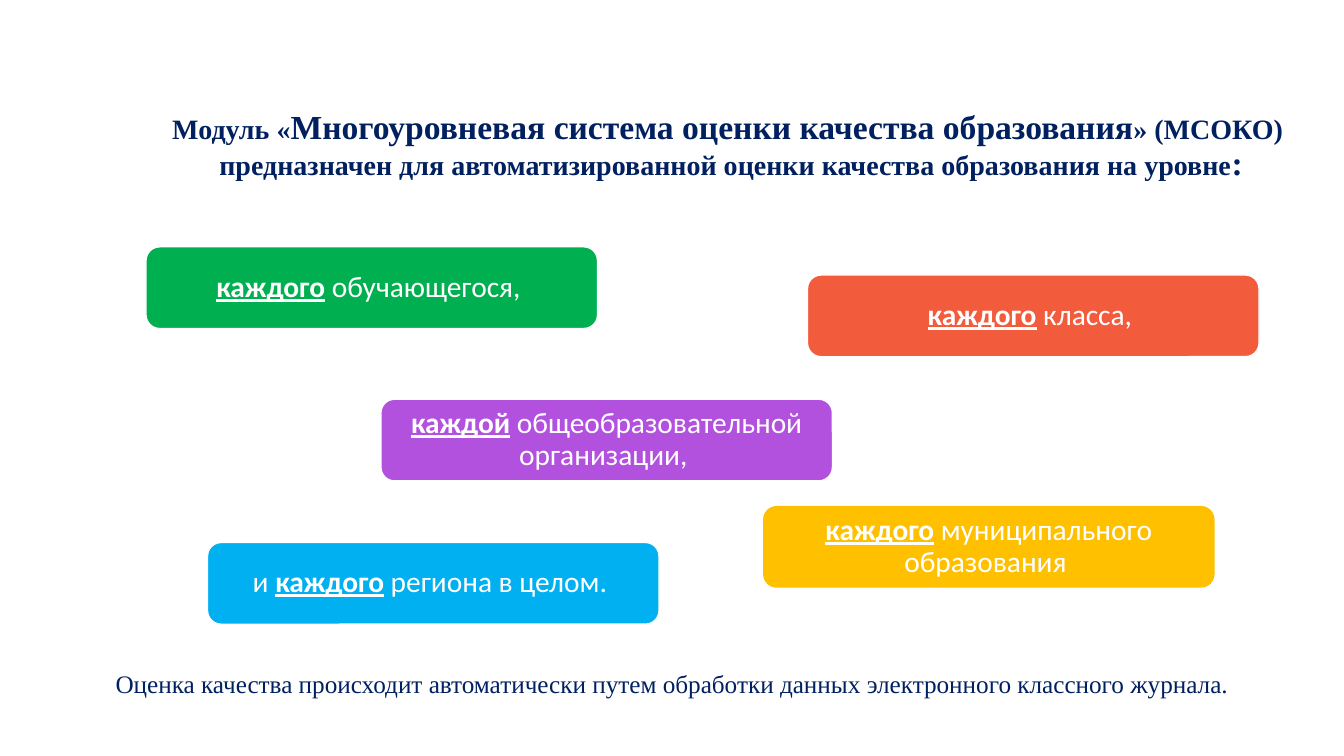
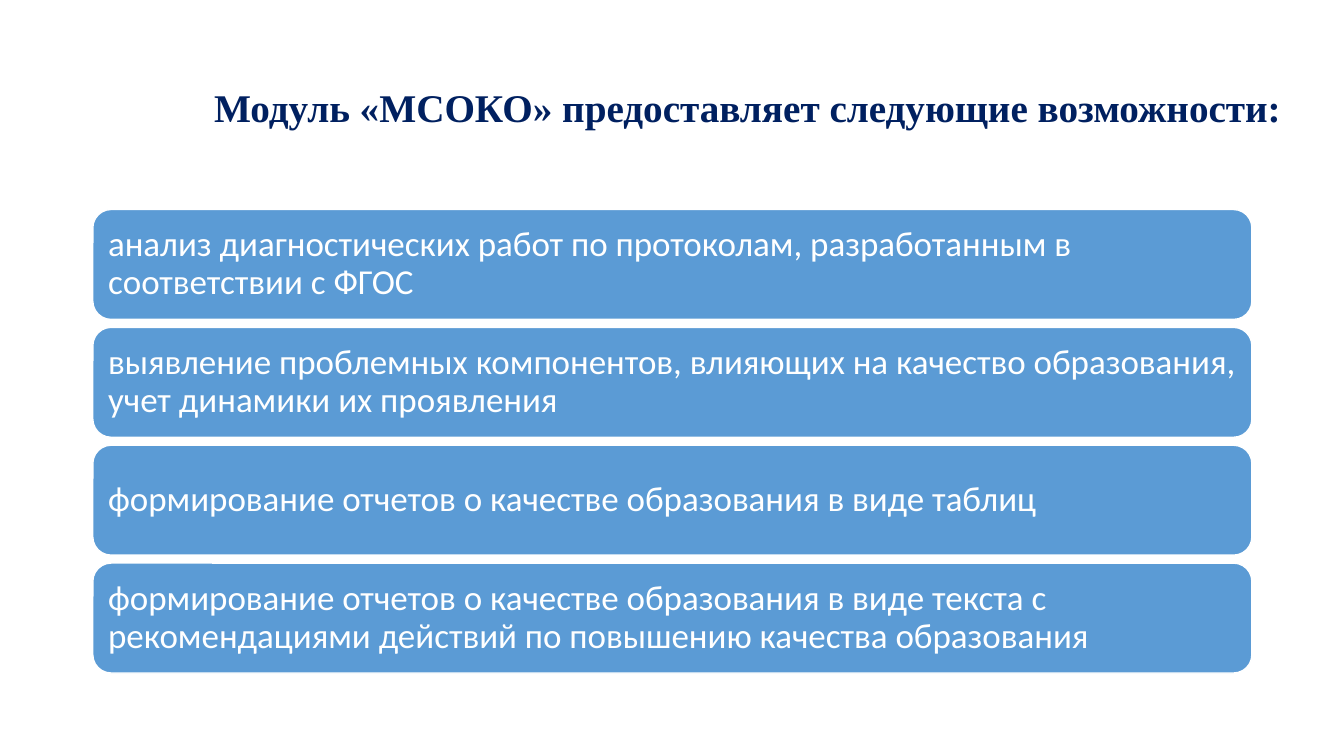
from pptx import Presentation
from pptx import util as u
from pptx.dml.color import RGBColor
from pptx.enum import shapes, text

NAVY, WHITE, BLUE = "002060", "FFFFFF", "5B9BD5"
SERIF, SANS = "Times New Roman", "Calibri"
KEY = {"bold": True, "underline": True}
BIG = {"size": u.Pt(24)}


def rgb(value):
    """Turn a hex string into a colour."""
    return RGBColor.from_string(value)


class Deck:
    """Holds the shared style and the current slide."""

    def __init__(self):
        """Open a widescreen presentation."""
        self.prs = Presentation()
        self.prs.slide_width, self.prs.slide_height = u.Cm(33.87), u.Cm(19.05)
        self.s = None

    def fill_text(self, tf, runs, font, size, color, **paragraph):
        """Fill a text frame with one paragraph of (text, format) runs."""
        tf.word_wrap = True
        tf.auto_size = text.MSO_AUTO_SIZE.NONE
        p = tf.paragraphs[0]
        for name, value in paragraph.items():
            setattr(p, name, value)
        for words, extra in runs:
            if words == "\n":
                p.add_line_break()
                continue
            r = p.add_run()
            r.text = words
            r.font.color.rgb = rgb(color)
            for name, value in {"name": font, "size": u.Pt(size), **extra}.items():
                setattr(r.font, name, value)

    def slide(self, box, runs, size):
        """Start a slide with a bold serif title."""
        self.s = self.prs.slides.add_slide(self.prs.slide_layouts[5])
        sp = self.s.shapes.title
        sp.left, sp.top, sp.width, sp.height = map(u.Cm, box)
        tf = sp.text_frame
        tf.vertical_anchor = text.MSO_ANCHOR.MIDDLE
        runs = [(words, {"bold": True, **extra}) for words, extra in runs]
        self.fill_text(tf, runs, SERIF, size, NAVY,
                       alignment=text.PP_ALIGN.CENTER, line_spacing=0.9)

    def card(self, box, runs, size, fill, align, margins, outline=True):
        """Add a rounded card with white text."""
        sp = self.s.shapes.add_shape(shapes.MSO_SHAPE.ROUNDED_RECTANGLE, *map(u.Cm, box))
        sp.shadow.inherit = False
        sp.fill.solid()
        sp.fill.fore_color.rgb = rgb(fill)
        if outline:
            sp.line.color.rgb = rgb(WHITE)
            sp.line.width = u.Pt(1)
        else:
            sp.line.fill.background()
        tf = sp.text_frame
        side, edge = map(u.Cm, margins)
        frame = {"margin_left": side, "margin_right": side, "margin_top": edge,
                 "margin_bottom": edge, "vertical_anchor": text.MSO_ANCHOR.MIDDLE}
        for name, value in frame.items():
            setattr(tf, name, value)
        self.fill_text(tf, runs, SANS, size, WHITE, alignment=align, line_spacing=0.9)

    def note(self, box, words, size):
        """Add a centred line of serif text."""
        tf = self.s.shapes.add_textbox(*map(u.Cm, box)).text_frame
        self.fill_text(tf, [(words, {})], SERIF, size, NAVY, alignment=text.PP_ALIGN.CENTER)


def levels(deck):
    """Build the slide on the levels of assessment."""
    deck.slide((2.13, 2.57, 32.59, 2.24), [
        ("Модуль «", {}),
        ("Многоуровневая система оценки качества образования", BIG),
        ("» (МСОКО) ", {}),
        ("\n", {}),
        ("предназначен для автоматизированной оценки качества образования на уровне", {}),
        (":", BIG)], 20)
    cards = [
        (3.68, 6.22, "00B050", "", "каждого", " обучающегося, ", True),
        (20.35, 6.93, "F35B3D", "", "каждого", " класса, ", True),
        (9.6, 10.06, "B351DF", "", "каждой", " общеобразовательной организации, ", True),
        (19.23, 12.75, "FFC000", "", "каждого", " муниципального образования ", False),
        (5.23, 13.67, "00B0F0", "и ", "каждого", " региона в целом. ", True)]
    for left, top, fill, before, key, after, outline in cards:
        runs = [(words, fmt) for words, fmt in ((before, {}), (key, KEY), (after, {})) if words]
        deck.card((left, top, 11.38, 2.06), runs, 21, fill,
                  text.PP_ALIGN.CENTER, (0.22, 0.11), outline)
    deck.note((0.43, 16.71, 33.02, 1.02),
              "Оценка качества происходит автоматически путем обработки данных "
              "электронного классного журнала.", 18)


def features(deck):
    """Build the slide on what the module offers."""
    deck.slide((4.65, 1.7, 28.37, 2.13),
               [("Модуль «МСОКО» предоставляет следующие возможности:", {})], 28)
    items = [
        "анализ диагностических работ по протоколам, разработанным в соответствии с ФГОС",
        "выявление проблемных компонентов, влияющих на качество образования, "
        "учет динамики их проявления",
        "формирование отчетов о качестве образования в виде таблиц",
        "формирование отчетов о качестве образования в виде текста с рекомендациями "
        "действий по повышению качества образования"]
    height, gap = 2.77, 0.2
    for i, words in enumerate(items):
        deck.card((2.34, 5.28 + i * (height + gap), 29.21, height), [(words, {})], 25,
                  BLUE, text.PP_ALIGN.LEFT, (0.25, 0.25))


def main():
    """Build and save the presentation."""
    deck = Deck()
    levels(deck)
    features(deck)
    deck.prs.save("out.pptx")


if __name__ == "__main__":
    main()
